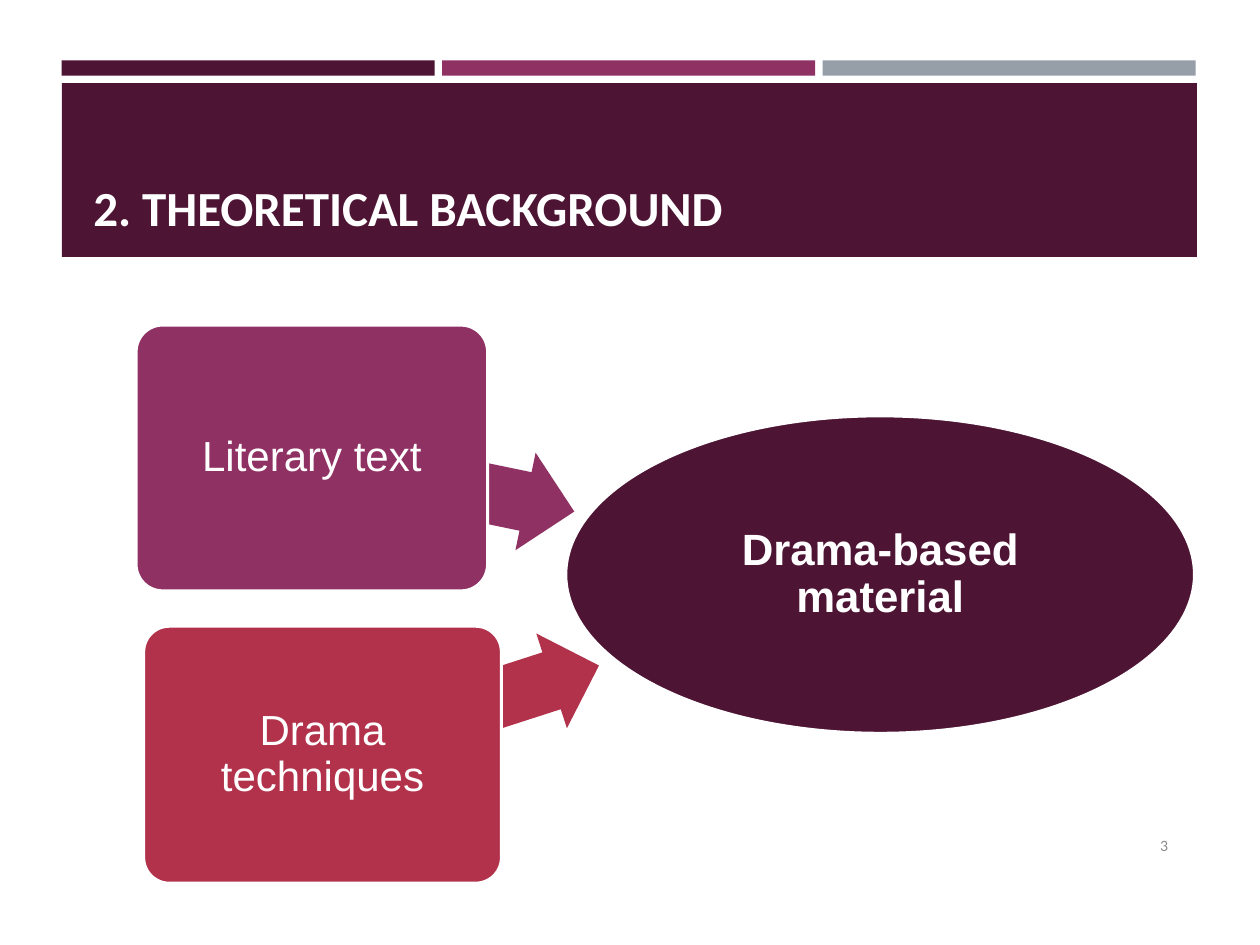
from dataclasses import dataclass

from pptx import Presentation
from pptx.dml.color import RGBColor
from pptx.enum.shapes import MSO_SHAPE
from pptx.enum.text import MSO_ANCHOR, PP_ALIGN
from pptx.util import Inches, Pt


@dataclass(frozen=True)
class Theme:
    plum: RGBColor = RGBColor(0x4D, 0x14, 0x34)
    magenta: RGBColor = RGBColor(0x90, 0x31, 0x63)
    red: RGBColor = RGBColor(0xB2, 0x32, 0x4B)
    steel: RGBColor = RGBColor(0x96, 0x9F, 0xA7)
    grey: RGBColor = RGBColor(0x8C, 0x8C, 0x8C)
    white: RGBColor = RGBColor(0xFF, 0xFF, 0xFF)
    heading_font: str = "Calibri"
    diagram_font: str = "Arial"
    title_size: int = 28
    result_size: int = 25
    source_size: int = 24
    number_size: int = 9


theme = Theme()

presentation = Presentation()
presentation.slide_width = Inches(10)
presentation.slide_height = Inches(7.5)
slide = presentation.slides.add_slide(presentation.slide_layouts[5])


def add_filled_shape(preset, box, fill, outlined=False):
    shape = slide.shapes.add_shape(preset, *(Inches(length) for length in box))
    shape.shadow.inherit = False
    shape.fill.solid()
    shape.fill.fore_color.rgb = fill
    if outlined:
        shape.line.color.rgb = theme.white
        shape.line.width = Pt(1.75)
    else:
        shape.line.fill.background()
    return shape


def write_text(shape, text, font, size, color, align, anchor, bold=False, inset=None):
    frame = shape.text_frame
    frame.word_wrap = True
    frame.vertical_anchor = anchor
    if inset is not None:
        frame.margin_left = frame.margin_right = Inches(inset)
        frame.margin_top = frame.margin_bottom = Inches(inset)
    paragraph = frame.paragraphs[0]
    paragraph.alignment = align
    run = paragraph.add_run()
    run.text = text
    run.font.name = font
    run.font.size = Pt(size)
    run.font.bold = bold
    run.font.color.rgb = color
    return paragraph


# Header: three strips above the title band
strip_width, strip_step = 2.96, 3.02
for index, color in enumerate([theme.plum, theme.magenta, theme.steel]):
    add_filled_shape(MSO_SHAPE.RECTANGLE,
                     (0.49 + index * strip_step, 0.48, strip_width, 0.12), color)
add_filled_shape(MSO_SHAPE.RECTANGLE, (0.49, 0.66, 9.01, 1.38), theme.plum)

title = slide.shapes.title
title.left, title.top = Inches(0.64), Inches(0.75)
title.width, title.height = Inches(8.74), Inches(1.18)
write_text(title, "2. THEORETICAL BACKGROUND", theme.heading_font, theme.title_size,
           theme.white, PP_ALIGN.LEFT, MSO_ANCHOR.BOTTOM, bold=True)
# The title must lie in front of its band
slide.shapes._spTree.append(title._element)

number_box = slide.shapes.add_textbox(Inches(8.53), Inches(6.51), Inches(0.84), Inches(0.4))
write_text(number_box, "3", theme.heading_font, theme.number_size,
           theme.grey, PP_ALIGN.RIGHT, MSO_ANCHOR.MIDDLE)

# Diagram: two sources lead to one result
result = add_filled_shape(MSO_SHAPE.OVAL, (4.49, 3.3, 4.99, 2.52), theme.plum, outlined=True)
paragraph = write_text(result, "Drama-based material", theme.diagram_font, theme.result_size,
                       theme.white, PP_ALIGN.CENTER, MSO_ANCHOR.MIDDLE, bold=True, inset=0.02)
paragraph.line_spacing = 0.9

sources = [
    ("Literary text", theme.magenta, (1.08, 2.58, 2.79, 2.11), (2.46, 3.45, 2.12, 0.79), 11.7),
    ("Drama techniques", theme.red, (1.14, 4.97, 2.84, 2.04), (2.51, 5.24, 2.3, 0.79), -17.9),
]
for text, color, source_box, arrow_box, angle in sources:
    arrow = add_filled_shape(MSO_SHAPE.RIGHT_ARROW, arrow_box, color)
    arrow.adjustments[0] = 0.6
    arrow.adjustments[1] = 0.5
    arrow.rotation = angle

    source = add_filled_shape(MSO_SHAPE.ROUNDED_RECTANGLE, source_box, color, outlined=True)
    source.adjustments[0] = 0.1
    paragraph = write_text(source, text, theme.diagram_font, theme.source_size,
                           theme.white, PP_ALIGN.CENTER, MSO_ANCHOR.MIDDLE, inset=0.05)
    paragraph.line_spacing = 0.9

presentation.save("out.pptx")
